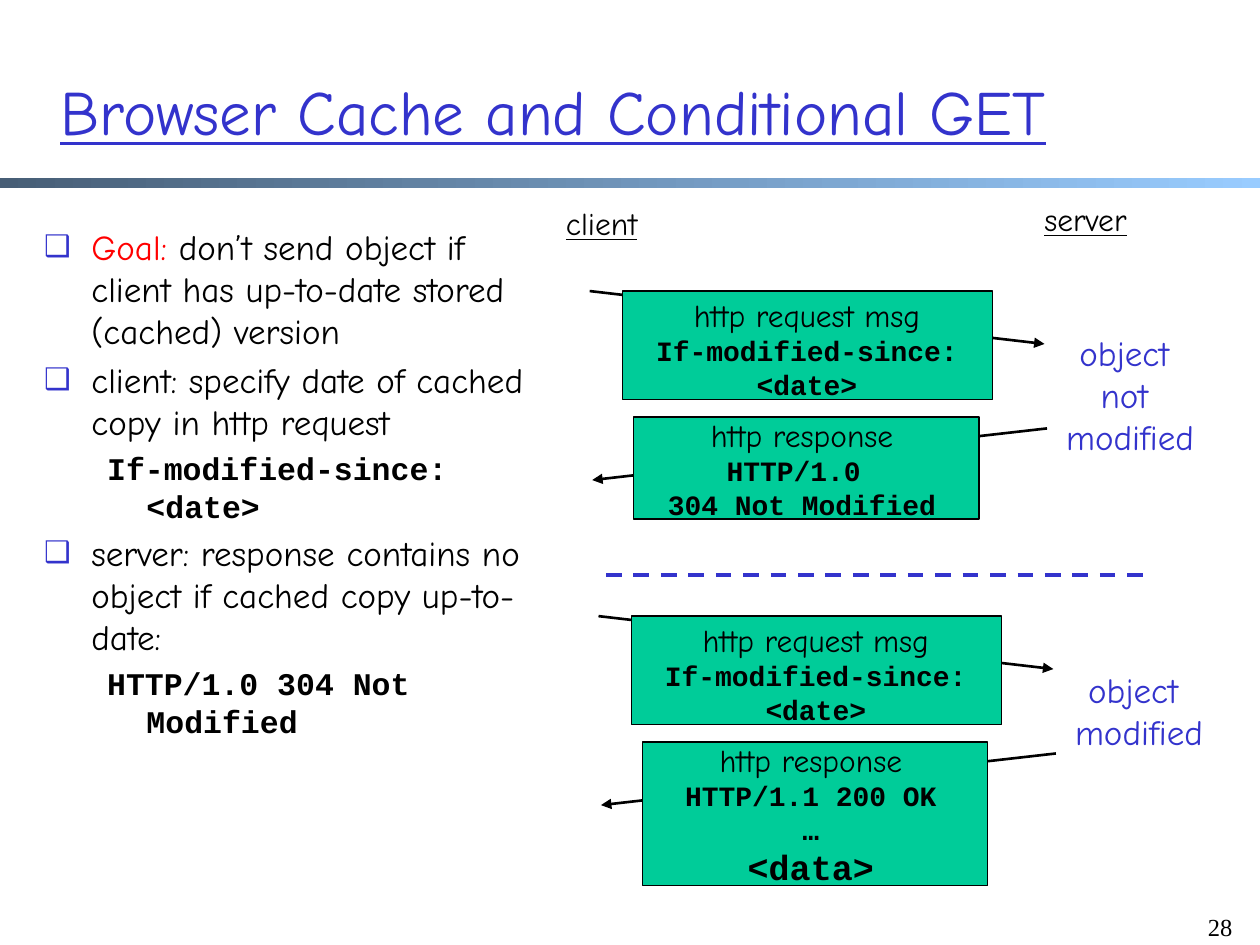
from lxml import etree
from pptx import Presentation
from pptx import util as u
from pptx.dml import color
from pptx.enum import dml, shapes, text
from pptx.oxml import ns

SCALE = 9144
HAND, CODE, SERIF = "Comic Neue", "Courier New", "Times New Roman"
BLACK, BLUE, RED, GREEN = "000000", "3333CC", "FF0000", "00CC99"
REQUEST = [("http request msg", HAND, 18), ("If-modified-since: <date>", CODE, 16)]


def px(*lengths):
    return [u.Emu(length * SCALE) for length in lengths]


def rgb(value):
    return color.RGBColor.from_string(value)


def add_run(para, words, font, size, ink=BLACK, underline=None):
    span = para.add_run()
    span.text = words
    span.font.name = font
    span.font.size = u.Pt(size)
    span.font.bold = font == CODE
    span.font.underline = underline
    span.font.color.rgb = rgb(ink)


def next_paragraph(frame, index):
    return frame.paragraphs[0] if index == 0 else frame.add_paragraph()


def place(shape, *bounds):
    shape.left, shape.top, shape.width, shape.height = px(*bounds)


def add_text(page, bounds, lines, ink=BLACK, underline=None, wrap=True,
             align=text.PP_ALIGN.CENTER):
    frame = page.shapes.add_textbox(*px(*bounds)).text_frame
    frame.word_wrap = wrap
    frame.auto_size = text.MSO_AUTO_SIZE.SHAPE_TO_FIT_TEXT
    for index, (words, font, size) in enumerate(lines):
        para = next_paragraph(frame, index)
        para.alignment = align
        add_run(para, words, font, size, ink, underline)


def add_rectangle(page, bounds):
    box = page.shapes.add_shape(shapes.MSO_SHAPE.RECTANGLE, *px(*bounds))
    box.shadow.inherit = False
    return box


def add_message(page, bounds, text_bounds, lines):
    box = add_rectangle(page, bounds)
    box.fill.solid()
    box.fill.fore_color.rgb = rgb(GREEN)
    box.line.color.rgb = rgb(BLACK)
    box.line.width = u.Pt(0.75)
    add_text(page, text_bounds, lines)


def add_line(page, ends, ink, width, dash=None, arrow=False):
    line = page.shapes.add_connector(shapes.MSO_CONNECTOR.STRAIGHT, *px(*ends))
    line.line.color.rgb = rgb(ink)
    line.line.width = u.Pt(width)
    if dash:
        line.line.dash_style = dash
    if arrow:
        etree.SubElement(line.line._ln, ns.qn("a:tailEnd"), type="triangle")
    etree.SubElement(line._element.spPr, ns.qn("a:effectLst"))


def add_exchange(page, dx, dy, response, response_height):
    def moved(left, top, width, height):
        return left + dx, top + dy, width, height

    def arrow(x1, y1, x2, y2):
        add_line(page, (x1 + dx, y1 + dy, x2 + dx, y2 + dy), BLACK, 1.5, arrow=True)

    arrow(468, 231, 829, 273)
    add_message(page, moved(494, 231, 294, 86), moved(494, 230, 293, 94), REQUEST)
    arrow(831, 340, 470, 381)
    add_message(page, moved(503, 331, 274, response_height),
                moved(492, 325, 289, response_height + 13), response)


def set_bullet(para):
    properties = para._p.get_or_add_pPr()
    tint = etree.SubElement(properties, ns.qn("a:buClr"))
    etree.SubElement(tint, ns.qn("a:srgbClr"), val=BLUE)
    etree.SubElement(properties, ns.qn("a:buSzPct"), val="85000")
    etree.SubElement(properties, ns.qn("a:buChar"), char="❑")


def fill_title(title, words):
    place(title, 38, 25, 902, 125)
    frame = title.text_frame
    frame.auto_size = text.MSO_AUTO_SIZE.NONE
    frame.vertical_anchor = text.MSO_ANCHOR.MIDDLE
    para = frame.paragraphs[0]
    para.alignment = text.PP_ALIGN.LEFT
    add_run(para, words, HAND, 36, BLUE, True)


def fill_body(body, items):
    place(body, 25, 174, 425, 471)
    frame = body.text_frame
    frame.auto_size = text.MSO_AUTO_SIZE.NONE
    for index, (is_code, runs) in enumerate(items):
        para = next_paragraph(frame, index)
        if is_code:
            para.level = 1
            etree.SubElement(para._p.get_or_add_pPr(), ns.qn("a:buNone"))
        else:
            set_bullet(para)
        for words, ink in runs:
            add_run(para, words, CODE if is_code else HAND, 18 if is_code else 20, ink)


def add_bar(page):
    bar = add_rectangle(page, (0, 141, 1000, 8))
    bar.fill.gradient()
    bar.fill.gradient_angle = 0
    for stop, ink in zip(bar.fill.gradient_stops, ("475E76", "99CCFF")):
        stop.color.rgb = rgb(ink)
    bar.line.fill.background()


def main():
    deck = Presentation()
    deck.slide_width, deck.slide_height = px(1000, 750)
    page = deck.slides.add_slide(deck.slide_layouts[1])
    add_bar(page)
    fill_title(page.shapes.title, "Browser Cache and Conditional GET")
    fill_body(page.placeholders[1], [
        (False, [("Goal:", RED),
                 (" don’t send object if client has up-to-date stored (cached) version", BLACK)]),
        (False, [("client: specify date of cached copy in http request", BLACK)]),
        (True, [("If-modified-since: <date>", BLACK)]),
        (False, [("server: response contains no object if cached copy up-to-date:", BLACK)]),
        (True, [("HTTP/1.0 304 Not Modified", BLACK)]),
    ])
    for words, bounds in (("client", (424, 157, 107, 50)), ("server", (801, 154, 121, 50))):
        add_text(page, bounds, [(words, HAND, 18)], underline=True, wrap=False)

    heading = ("http response", HAND, 18)
    add_exchange(page, 0, 0, [
        heading, ("HTTP/1.0 ", CODE, 16), ("304 Not Modified", CODE, 16)], 81)
    add_line(page, (481, 456, 908, 456), BLUE, 2.25, dash=dml.MSO_LINE.DASH)
    add_exchange(page, 7, 258, [
        heading, ("HTTP/1.1 200 OK", CODE, 16), ("…", CODE, 16), ("<data>", CODE, 20)], 114)

    for outcome, bounds in ((("object ", "not ", "modified"), (830, 258, 134, 110)),
                            (("object ", "modified"), (837, 526, 134, 77))):
        add_text(page, bounds, [(words, HAND, 20) for words in outcome], BLUE, wrap=False)
    add_text(page, (938, 719, 50, 50), [("28", SERIF, 14)], align=text.PP_ALIGN.RIGHT)
    deck.save("out.pptx")


if __name__ == "__main__":
    main()
